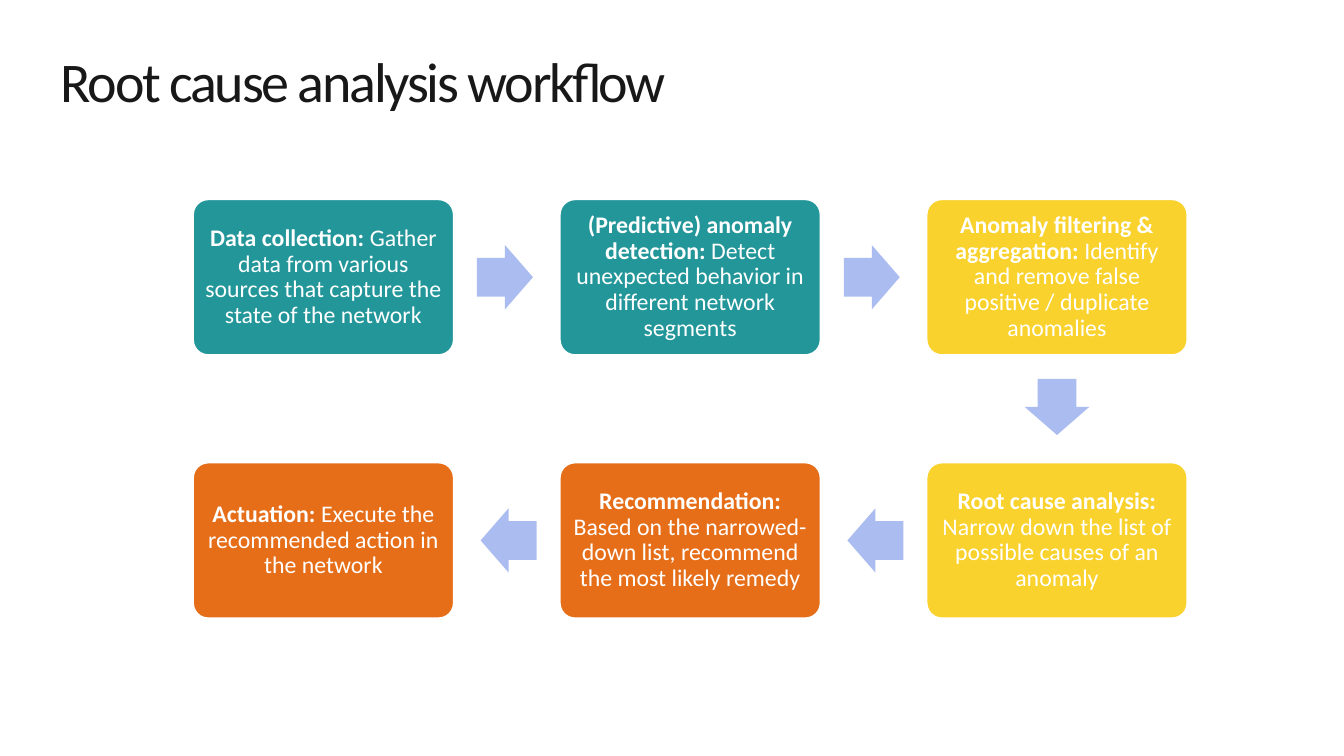
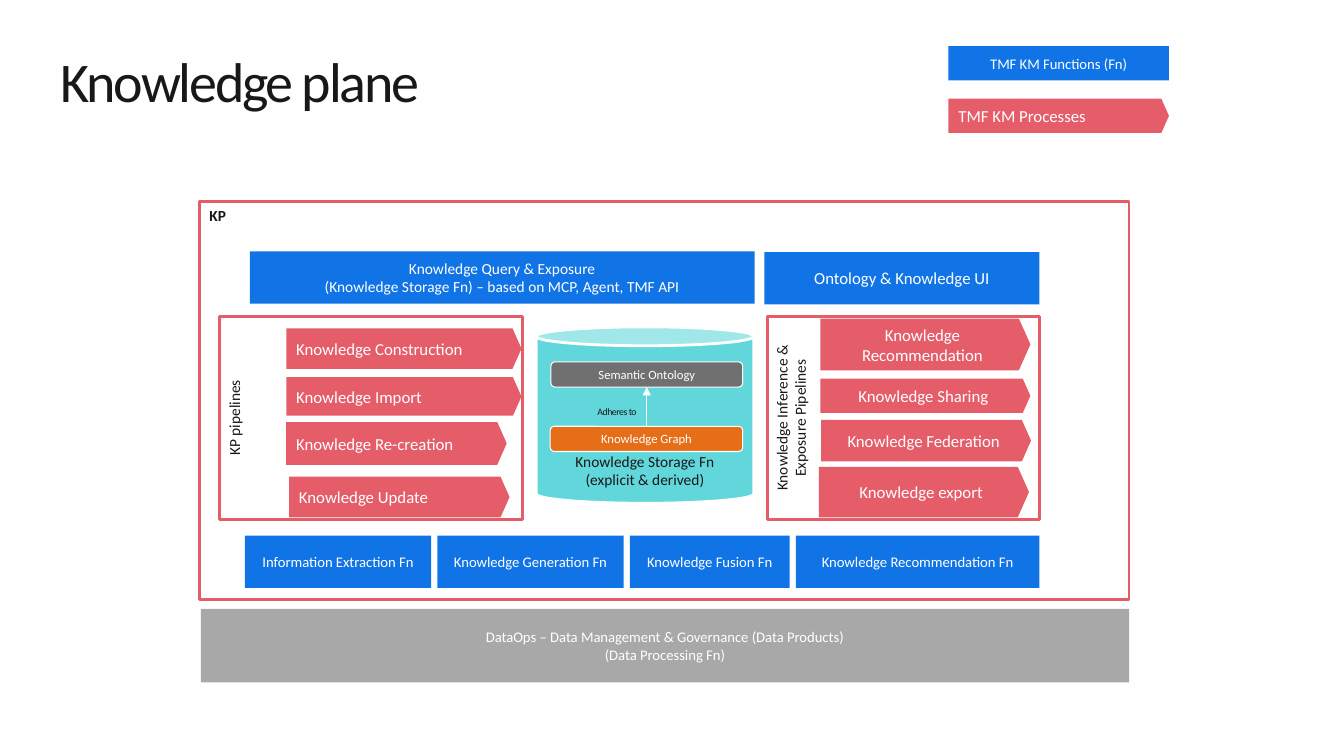
import pptx
import pptx.util
import pptx.dml.color
import pptx.enum.shapes
import pptx.enum.text
import pptx.oxml.ns
import lxml.etree

Pt = pptx.util.Pt
SHAPE = pptx.enum.shapes.MSO_SHAPE
ALIGN = pptx.enum.text.PP_ALIGN
ANCHOR = pptx.enum.text.MSO_ANCHOR
COLORS = {
    "ink": "181818", "white": "FFFFFF", "teal": "23969A", "yellow": "FAD22D",
    "orange": "E66E19", "periwinkle": "ABBCF0", "blue": "1174E6",
    "red": "E65D6A", "gray": "A8A8A8", "charcoal": "707070", "aqua": "62D7DB",
}
FONT = "Calibri"
TITLE_ONLY = 5


def color(name):
    return pptx.dml.color.RGBColor.from_string(COLORS[name])


class Deck:
    def __init__(self):
        self.presentation = pptx.Presentation()
        self.presentation.slide_width = Pt(960)
        self.presentation.slide_height = Pt(540)
        self.slide = None

    def add_slide(self, title):
        layout = self.presentation.slide_layouts[TITLE_ONLY]
        self.slide = self.presentation.slides.add_slide(layout)
        shape = self.slide.shapes.title
        shape.left, shape.top, shape.width, shape.height = Pt(37.5), Pt(37.5), Pt(658), Pt(85)
        shape.text_frame.auto_size = pptx.enum.text.MSO_AUTO_SIZE.NONE
        self.set_text(shape, [(title, False)], 40, "ink", ALIGN.LEFT, ANCHOR.TOP,
                      insets=(6, 3), line_spacing=0.85, tracking=-1.6)

    def set_text(self, shape, runs, size, ink="white", align=ALIGN.CENTER, anchor=ANCHOR.MIDDLE,
                 insets=(7.2, 3.6), line_spacing=1.0, tracking=0):
        frame = shape.text_frame
        frame.word_wrap = True
        frame.vertical_anchor = anchor
        frame.margin_left = frame.margin_right = Pt(insets[0])
        frame.margin_top = frame.margin_bottom = Pt(insets[1])
        paragraph = frame.paragraphs[0]
        paragraph.alignment = align
        paragraph.line_spacing = line_spacing
        paragraph.space_before = Pt(0)
        for text, bold in runs:
            for index, line in enumerate(text.split("\n")):
                if index:
                    paragraph.add_line_break()
                run = paragraph.add_run()
                run.text = line
                run.font.name = FONT
                run.font.size = Pt(size)
                run.font.bold = bold
                run.font.color.rgb = color(ink)
                if tracking:
                    run.font._element.set("spc", str(round(tracking * 100)))

    def shape(self, kind, box, fill=None, line=None, line_width=2, adjustments=()):
        shape = self.slide.shapes.add_shape(kind, *map(Pt, box))
        shape.shadow.inherit = False
        if fill:
            shape.fill.solid()
            shape.fill.fore_color.rgb = color(fill)
        else:
            shape.fill.background()
        if line:
            shape.line.color.rgb = color(line)
            shape.line.width = Pt(line_width)
        else:
            shape.line.fill.background()
        for index, value in enumerate(adjustments):
            shape.adjustments[index] = value
        return shape

    def step(self, box, fill, heading, detail):
        shape = self.shape(SHAPE.ROUNDED_RECTANGLE, box, fill, "white", adjustments=[0.1])
        self.set_text(shape, [(heading, True), (" " + detail, False)], 17,
                      insets=(4, 4), line_spacing=0.9)

    def block_arrow(self, center, rotation):
        width, height = 40, 46
        box = (center[0] - width / 2, center[1] - height / 2, width, height)
        shape = self.shape(SHAPE.RIGHT_ARROW, box, "periwinkle", adjustments=[0.6, 0.5])
        shape.rotation = rotation

    def block(self, box, text, size=10.5, fill="blue"):
        self.set_text(self.shape(SHAPE.RECTANGLE, box, fill), [(text, False)], size)

    def process(self, box, text, align=ALIGN.LEFT):
        shape = self.shape(SHAPE.PENTAGON, box, "red", adjustments=[0.222])
        self.set_text(shape, [(text, False)], 12, align=align)

    def frame(self, box, text, vertical=True):
        shape = self.shape(SHAPE.RECTANGLE, box, line="red")
        align = ALIGN.CENTER if vertical else ALIGN.LEFT
        self.set_text(shape, [(text, not vertical)], 11, "ink", align, ANCHOR.TOP)
        if vertical:
            shape.element.txBody.bodyPr.set("vert", "vert270")

    def can(self, box, text):
        shape = self.shape(SHAPE.CAN, box, "aqua", "white", adjustments=[0.107])
        self.set_text(shape, [(text, False)], 11, "ink", anchor=ANCHOR.BOTTOM)

    def pill(self, box, fill, text):
        shape = self.shape(SHAPE.ROUNDED_RECTANGLE, box, fill, "white", 0.75)
        self.set_text(shape, [(text, False)], 9)

    def label(self, box, text):
        shape = self.slide.shapes.add_textbox(*map(Pt, box))
        self.set_text(shape, [(text, False)], 7, "ink", anchor=ANCHOR.TOP,
                      insets=(6, 3), tracking=-0.3)

    def arrow(self, start, end):
        connector = self.slide.shapes.add_connector(
            pptx.enum.shapes.MSO_CONNECTOR.STRAIGHT, *map(Pt, start + end))
        connector.line.color.rgb = color("white")
        connector.line.width = Pt(1)
        qn = pptx.oxml.ns.qn
        line = connector.element.spPr.find(qn("a:ln"))
        lxml.etree.SubElement(line, qn("a:tailEnd"), type="triangle")
        lxml.etree.SubElement(connector.element.spPr, qn("a:effectLst"))


def build_workflow(deck):
    deck.add_slide("Root cause analysis workflow")
    left, top, width, height = 137.5, 142, 187, 112
    column_step, row_step, arrow_shift = 262, 188, 1.3
    steps = [
        (0, 0, "teal", "Data collection:",
         "Gather data from various sources that capture the state of the network"),
        (1, 0, "teal", "(Predictive) anomaly detection:",
         "Detect unexpected behavior in different network segments"),
        (2, 0, "yellow", "Anomaly filtering & aggregation:",
         "Identify and remove false positive / duplicate anomalies"),
        (2, 1, "yellow", "Root cause analysis:",
         "Narrow down the list of possible causes of an anomaly"),
        (1, 1, "orange", "Recommendation:",
         "Based on the narrowed-down list, recommend the most likely remedy"),
        (0, 1, "orange", "Actuation:", "Execute the recommended action in the network"),
    ]
    rotations = {(1, 0): 0, (0, 1): 90, (-1, 0): 180}
    for index, (column, row, fill, heading, detail) in enumerate(steps):
        x, y = left + column * column_step, top + row * row_step
        deck.step((x, y, width, height), fill, heading, detail)
        if index + 1 < len(steps):
            across, down = steps[index + 1][0] - column, steps[index + 1][1] - row
            center = (x + width / 2 + across * (column_step / 2 - arrow_shift),
                      y + height / 2 + down * (row_step / 2 - arrow_shift))
            deck.block_arrow(center, rotations[across, down])


def build_knowledge_plane(deck):
    deck.add_slide("Knowledge plane")
    deck.block((677.5, 33, 157.5, 24.5), "TMF KM Functions (Fn)")
    deck.process((677.5, 70.5, 157.5, 24.5), "TMF KM Processes")

    deck.frame((142.5, 144, 664, 284.5), "KP", vertical=False)
    deck.block((143.5, 435, 663, 52.5),
               "DataOps – Data Management & Governance (Data Products)\n(Data Processing Fn)",
               fill="gray")
    deck.block((178.5, 179.5, 360.5, 37.5),
               "Knowledge Query & Exposure\n"
               "(Knowledge Storage Fn) – based on MCP, Agent, TMF API", 11)
    deck.block((546, 180, 196.5, 37.5), "Ontology & Knowledge UI", 12)

    x, gap = 175, 4.5
    for text, width in [("Information Extraction Fn", 133), ("Knowledge Generation Fn", 133),
                        ("Knowledge Fusion Fn", 114), ("Knowledge Recommendation Fn", 174)]:
        deck.block((x, 382.5, width, 37.5), text)
        x += width + gap

    deck.frame((157, 226, 216, 145), "KP pipelines")
    deck.frame((548, 226, 194.5, 145), "Knowledge Inference & Exposure Pipelines")
    for text, x, y, width, height in [
        ("Knowledge Construction", 204.5, 234.5, 168, 29),
        ("Knowledge Import", 204.5, 269.5, 168, 27.5),
        ("Knowledge Re-creation", 204.5, 301.5, 157.5, 30.5),
        ("Knowledge Update", 206.5, 340.5, 157.5, 29),
    ]:
        deck.process((x, y, width, height), text)
    for text, x, y, height in [
        ("Knowledge Recommendation", 586, 227.5, 37),
        ("Knowledge Sharing", 586, 270.5, 24.5),
        ("Knowledge Federation", 586.5, 300, 29.5),
        ("Knowledge export", 585, 333.5, 36),
    ]:
        deck.process((x, y, 150, height), text, ALIGN.CENTER)

    deck.can((383, 233.5, 155.5, 126), "Knowledge Storage Fn\n(explicit & derived)")
    deck.pill((393.5, 258.5, 137, 18), "charcoal", "Semantic Ontology")
    deck.pill((393, 304.5, 137.5, 18), "orange", "Knowledge Graph")
    deck.arrow((462, 304.5), (462, 276.5))
    deck.label((410.5, 286.5, 60.5, 12), "Adheres to")


def main():
    deck = Deck()
    build_workflow(deck)
    build_knowledge_plane(deck)
    deck.presentation.save("out.pptx")


if __name__ == "__main__":
    main()
